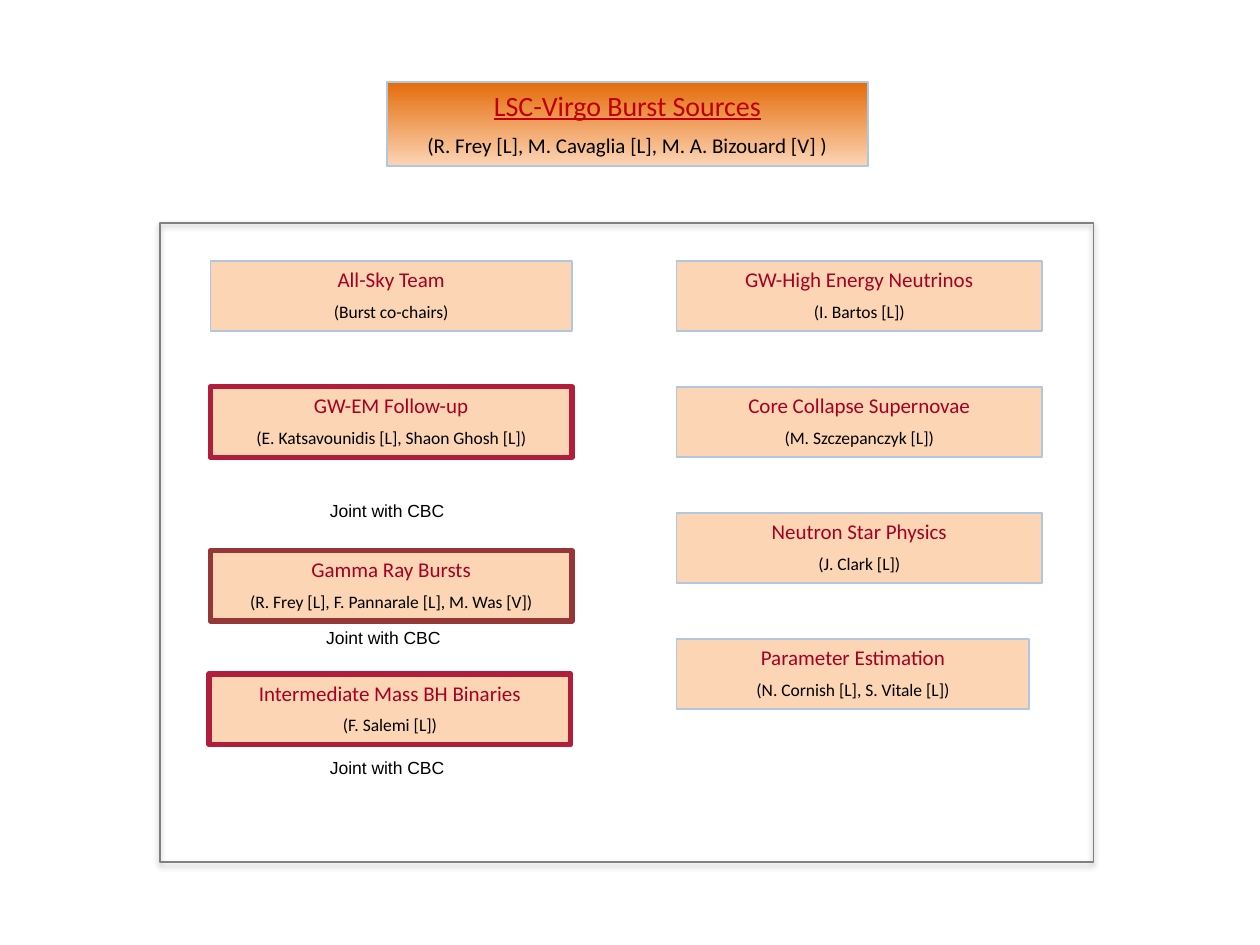
from dataclasses import dataclass

from lxml import etree
from pptx import Presentation
from pptx.dml.color import RGBColor
from pptx.enum.shapes import MSO_SHAPE
from pptx.enum.text import MSO_ANCHOR, MSO_AUTO_SIZE, PP_ALIGN
from pptx.oxml import parse_xml
from pptx.util import Inches, Pt

RECTANGLE = MSO_SHAPE.RECTANGLE
TOP = MSO_ANCHOR.TOP
GROW = MSO_AUTO_SIZE.SHAPE_TO_FIT_TEXT
CENTER = PP_ALIGN.CENTER


@dataclass(frozen=True)
class Theme:
    black: RGBColor = RGBColor.from_string("000000")
    title: RGBColor = RGBColor.from_string("C00000")
    team: RGBColor = RGBColor.from_string("A50021")
    orange: RGBColor = RGBColor.from_string("E46C0A")
    peach: RGBColor = RGBColor.from_string("FCD5B5")
    border: RGBColor = RGBColor.from_string("B0C6E1")
    joint: RGBColor = RGBColor.from_string("B01E3B")
    gamma: RGBColor = RGBColor.from_string("953735")
    frame: RGBColor = RGBColor.from_string("808080")
    font: str = "Calibri"
    note_font: str = "Arial"
    large: int = 16
    medium: int = 12
    small: int = 10


theme = Theme()


def add_line(para, text, font, size, color):
    span = para.add_run()
    span.text = text
    span.font.name = font
    span.font.size = Pt(size)
    span.font.color.rgb = color
    return span


def add_box(place, heading, people, sizes, color, border, width):
    """Add an outlined box with a heading and the names of its chairs."""
    box = page.shapes.add_shape(RECTANGLE, *map(Inches, place))
    box.shadow.inherit = False
    box.line.color.rgb = border
    box.line.width = Pt(width)
    frame = box.text_frame
    frame.word_wrap = True
    frame.auto_size = GROW
    frame.vertical_anchor = TOP
    first, second = frame.paragraphs[0], frame.add_paragraph()
    first.alignment = second.alignment = CENTER
    second.space_before = Pt(sizes[1] / 2)
    span = add_line(first, heading, theme.font, sizes[0], color)
    add_line(second, people, theme.font, sizes[1], theme.black)
    return box, span


deck = Presentation()
deck.slide_width, deck.slide_height = Inches(10), Inches(7.5)
page = deck.slides.add_slide(deck.slide_layouts[6])

# Title box
title_box, title_span = add_box(
    (3.07, 0.65, 3.82, 0.67), "LSC-Virgo Burst Sources",
    "(R. Frey [L], M. Cavaglia [L], M. A. Bizouard [V] )",
    (theme.large, theme.medium), theme.title, theme.border, 1)
title_span.font.underline = True
title_box.fill.gradient()
title_box.fill.gradient_angle = 270
stops = title_box.fill.gradient_stops
for stop, position, color in zip(stops, (0, 1), (theme.orange, theme.peach)):
    stop.position = position
    stop.color.rgb = color

# Frame around the teams
team_frame = page.shapes.add_shape(
    RECTANGLE, Inches(1.27), Inches(1.77), Inches(7.41), Inches(5.07))
team_frame.fill.background()
team_frame.line.color.rgb = theme.frame
team_frame.line.width = Pt(1)
team_frame.shadow.inherit = False
effects = team_frame.element.spPr.find("{*}effectLst")
shadow = parse_xml(
    '<a:outerShdw xmlns:a="http://schemas.openxmlformats.org/drawingml/2006/main"'
    ' rotWithShape="0"><a:srgbClr val="000000"><a:alpha val="35000"/>'
    '</a:srgbClr></a:outerShdw>')
for name, value in (("blurRad", Pt(3.1)), ("dist", Pt(1.8)), ("dir", 90 * 60000)):
    shadow.set(name, str(int(value)))
effects.append(shadow)

# Team boxes: left, top, width, heading, people, border colour, border width
LEFT, RIGHT, FIRST_ROW, ROW_STEP = 1.67, 5.37, 2.07, 1
teams = [
    (LEFT, FIRST_ROW, 2.87, "All-Sky Team", "(Burst co-chairs)", theme.border, 1),
    (LEFT, FIRST_ROW + ROW_STEP, 2.87, "GW-EM Follow-up",
     "(E. Katsavounidis [L], Shaon Ghosh [L])", theme.joint, 3),
    (LEFT, 4.37, 2.87, "Gamma Ray Bursts",
     "(R. Frey [L], F. Pannarale [L], M. Was [V])", theme.gamma, 3),
    (LEFT - 0.01, 5.35, 2.87, "Intermediate Mass BH Binaries",
     "(F. Salemi [L])", theme.joint, 3),
]
right_teams = [
    ("GW-High Energy Neutrinos", "(I. Bartos [L])", 2.9),
    ("Core Collapse Supernovae", "(M. Szczepanczyk [L])", 2.9),
    ("Neutron Star Physics", "(J. Clark [L])", 2.9),
    ("Parameter Estimation", "(N. Cornish [L], S. Vitale [L])", 2.8),
]
for row, (heading, people, width) in enumerate(right_teams):
    teams.append((RIGHT, FIRST_ROW + row * ROW_STEP, width,
                  heading, people, theme.border, 1))

for left, top, width, heading, people, border, weight in teams:
    team_box, _ = add_box((left, top, width, 0.56), heading, people,
                          (theme.medium, theme.small), theme.team, border, weight)
    team_box.fill.solid()
    team_box.fill.fore_color.rgb = theme.peach

# Notes under the joint teams
for left, top in ((2.52, 3.92), (2.49, 4.93), (2.52, 5.96)):
    note = page.shapes.add_textbox(
        Inches(left), Inches(top), Inches(1.16), Inches(0.27))
    note.text_frame.word_wrap = False
    note.text_frame.auto_size = GROW
    add_line(note.text_frame.paragraphs[0], "Joint with CBC",
             theme.note_font, theme.small, theme.black)

deck.save("out.pptx")
